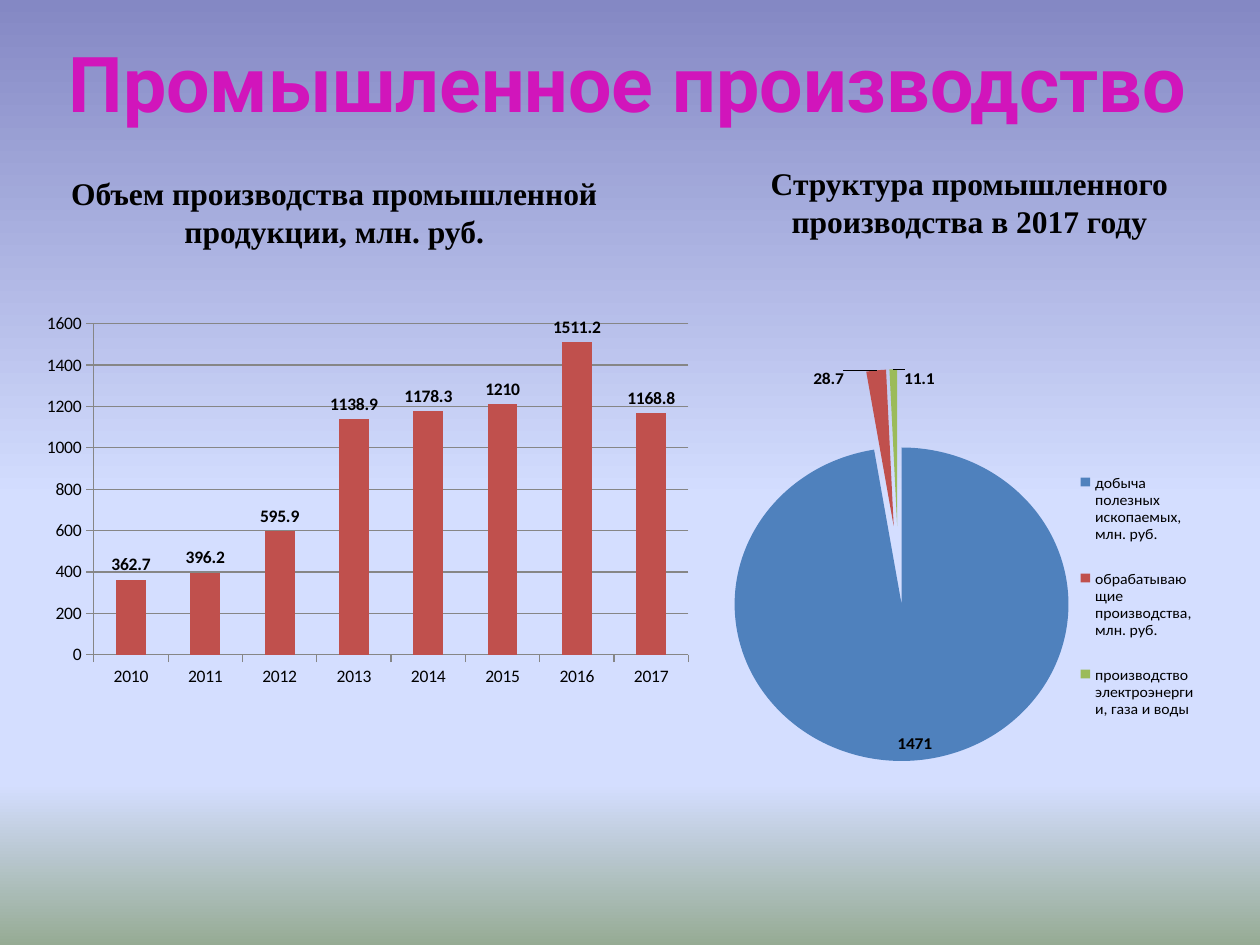
"""Build a slide on industrial output with a column chart and a pie chart."""
from dataclasses import dataclass

import pptx
import pptx.chart.chart
import pptx.chart.data
import pptx.dml.color
import pptx.enum.chart
import pptx.enum.text
import pptx.oxml
import pptx.oxml.ns
import pptx.slide
import pptx.util

Pt = pptx.util.Pt
RGBColor = pptx.dml.color.RGBColor
Anchor = pptx.enum.text.MSO_ANCHOR
ChartType = pptx.enum.chart.XL_CHART_TYPE
LabelPosition = pptx.enum.chart.XL_LABEL_POSITION
qn = pptx.oxml.ns.qn

BLACK = RGBColor(0x00, 0x00, 0x00)
MAGENTA = RGBColor(0xD1, 0x15, 0xBB)
GREY = RGBColor(0x86, 0x86, 0x86)
BLUE = RGBColor(0x4F, 0x81, 0xBD)
RED = RGBColor(0xC0, 0x50, 0x4D)
GREEN = RGBColor(0x9B, 0xBB, 0x59)
SKY_STOPS = (
    (0, RGBColor(0x84, 0x88, 0xC4)),
    (53, RGBColor(0xD4, 0xDE, 0xFF)),
    (83, RGBColor(0xD4, 0xDE, 0xFF)),
    (100, RGBColor(0x96, 0xAB, 0x94)),
)


@dataclass(frozen=True)
class Box:
    left: float
    top: float
    width: float
    height: float

    def lengths(self) -> tuple:
        return tuple(Pt(value) for value in (self.left, self.top, self.width, self.height))


@dataclass(frozen=True)
class Heading:
    text: str
    box: Box
    anchor: Anchor
    font: dict


@dataclass(frozen=True)
class ChartSpec:
    kind: ChartType
    box: Box
    categories: tuple
    values: tuple
    plot_layout: dict


HEADING_FONT = {"name": "Times New Roman", "size": Pt(18), "bold": True}
TITLE_FONT = {"name": "Roboto", "size": Pt(44), "bold": True}
CHART_FONT = {"name": "Calibri", "size": Pt(10)}
LABEL_FONT = CHART_FONT | {"bold": True}
LEGEND_FONT = CHART_FONT | {"size": Pt(9)}

HEADINGS = (
    Heading("Структура промышленного производства в 2017 году",
            Box(388, 90, 332, 51), Anchor.TOP, HEADING_FONT),
    Heading("Объем производства промышленной продукции, млн. руб.",
            Box(28, 84.5, 326, 73), Anchor.MIDDLE, HEADING_FONT),
    Heading("Промышленное производство",
            Box(22.5, 16.5, 673, 60.5), Anchor.TOP, TITLE_FONT),
)
STRUCTURE = ChartSpec(
    ChartType.PIE, Box(388, 196.5, 300, 238.5),
    ("добыча полезных ископаемых, млн. руб.",
     "обрабатывающие производства, млн. руб.",
     "производство электроэнергии, газа и воды"),
    (1471, 28.7, 11.1), {"x": 0, "y": 0, "w": 0.835, "h": 1},
)
VOLUME = ChartSpec(
    ChartType.COLUMN_CLUSTERED, Box(20, 168, 391, 227),
    tuple(str(year) for year in range(2010, 2018)),
    (362.7, 396.2, 595.9, 1138.9, 1178.3, 1210, 1511.2, 1168.8),
    {"x": 0.086, "y": 0.075, "w": 0.869, "h": 0.833},
)
LEGEND_LAYOUT = {"x": 0.775, "y": 0.2, "w": 0.22, "h": 0.76}
SLICES = (
    (BLUE, LabelPosition.INSIDE_END, None),
    (RED, LabelPosition.OUTSIDE_END, {"x": -0.06, "y": 0.04}),
    (GREEN, LabelPosition.OUTSIDE_END, {"x": 0.05, "y": 0.04}),
)


def style_font(font, values: dict, color: RGBColor = BLACK) -> None:
    for name, value in values.items():
        setattr(font, name, value)
    font.color.rgb = color


def set_layout(element, index: int, values: dict, modes: tuple = ()) -> None:
    for old_layout in element.findall(qn("c:layout")):
        element.remove(old_layout)
    settings = "".join(f'<c:{tag} val="{value}"/>' for tag, value in (*modes, *values.items()))
    element.insert(index, pptx.oxml.parse_xml(
        f'<c:layout {pptx.oxml.ns.nsdecls("c")}>'
        f"<c:manualLayout>{settings}</c:manualLayout></c:layout>"))


def paint_background(slide: pptx.slide.Slide) -> None:
    fill = slide.background.fill
    fill.gradient()
    fill.gradient_angle = 270
    stop_list = slide.element.find(".//" + qn("a:gsLst"))
    for stop in list(stop_list):
        stop_list.remove(stop)
    for percent, color in SKY_STOPS:
        stop_list.append(pptx.oxml.parse_xml(
            f'<a:gs {pptx.oxml.ns.nsdecls("a")} pos="{percent * 1000}">'
            f'<a:srgbClr val="{color}"/></a:gs>'))


def add_heading(slide: pptx.slide.Slide, heading: Heading, color: RGBColor) -> None:
    text_frame = slide.shapes.add_textbox(*heading.box.lengths()).text_frame
    text_frame.word_wrap = True
    text_frame.vertical_anchor = heading.anchor
    paragraph = text_frame.paragraphs[0]
    paragraph.alignment = pptx.enum.text.PP_ALIGN.CENTER
    run = paragraph.add_run()
    run.text = heading.text
    style_font(run.font, heading.font, color)


def add_chart(slide: pptx.slide.Slide, spec: ChartSpec) -> pptx.chart.chart.Chart:
    data = pptx.chart.data.CategoryChartData()
    data.categories = spec.categories
    data.add_series("Series 1", spec.values)
    chart = slide.shapes.add_chart(spec.kind, *spec.box.lengths(), data).chart
    chart.has_title = False
    chart.has_legend = False
    style_font(chart.font, CHART_FONT)
    modes = (("layoutTarget", "inner"), ("xMode", "edge"), ("yMode", "edge"))
    set_layout(chart.element.find(".//" + qn("c:plotArea")), 0, spec.plot_layout, modes)
    plot = chart.plots[0]
    plot.has_data_labels = True
    plot.data_labels.show_value = True
    plot.data_labels.show_percentage = False
    style_font(plot.data_labels.font, LABEL_FONT)
    return chart


def style_columns(chart: pptx.chart.chart.Chart) -> None:
    plot = chart.plots[0]
    plot.gap_width = 150
    plot.vary_by_categories = False
    plot.data_labels.position = LabelPosition.OUTSIDE_END
    fill = plot.series[0].format.fill
    fill.solid()
    fill.fore_color.rgb = RED
    chart.value_axis.has_major_gridlines = True
    lines = (chart.category_axis.format.line, chart.value_axis.format.line,
             chart.value_axis.major_gridlines.format.line)
    for line in lines:
        line.color.rgb = GREY
        line.width = Pt(0.75)
    for axis in (chart.category_axis, chart.value_axis):
        axis.major_tick_mark = pptx.enum.chart.XL_TICK_MARK.OUTSIDE


def style_pie(chart: pptx.chart.chart.Chart) -> None:
    chart.plots[0].vary_by_categories = True
    series = chart.plots[0].series[0]
    series_element = chart.element.find(".//" + qn("c:ser"))
    series_element.find(qn("c:tx")).addnext(pptx.oxml.parse_xml(
        f'<c:explosion {pptx.oxml.ns.nsdecls("c")} val="25"/>'))
    for index, (color, position, offset) in enumerate(SLICES):
        point = series.points[index]
        point.format.fill.solid()
        point.format.fill.fore_color.rgb = color
        style_font(point.data_label.font, LABEL_FONT)
        point.data_label.position = position
        if offset:
            label = series_element.findall(".//" + qn("c:dLbl"))[index]
            set_layout(label, 1, offset)
    chart.has_legend = True
    chart.legend.position = pptx.enum.chart.XL_LEGEND_POSITION.RIGHT
    chart.legend.include_in_layout = False
    style_font(chart.legend.font, LEGEND_FONT)
    modes = (("xMode", "edge"), ("yMode", "edge"))
    set_layout(chart.element.find(".//" + qn("c:legend")), 1, LEGEND_LAYOUT, modes)


def main() -> None:
    presentation = pptx.Presentation()
    presentation.slide_width, presentation.slide_height = Pt(720), Pt(540)
    slide = presentation.slides.add_slide(presentation.slide_layouts[6])
    paint_background(slide)
    for heading in HEADINGS:
        add_heading(slide, heading, MAGENTA if heading.font is TITLE_FONT else BLACK)
    style_pie(add_chart(slide, STRUCTURE))
    style_columns(add_chart(slide, VOLUME))
    presentation.save("out.pptx")


if __name__ == "__main__":
    main()
